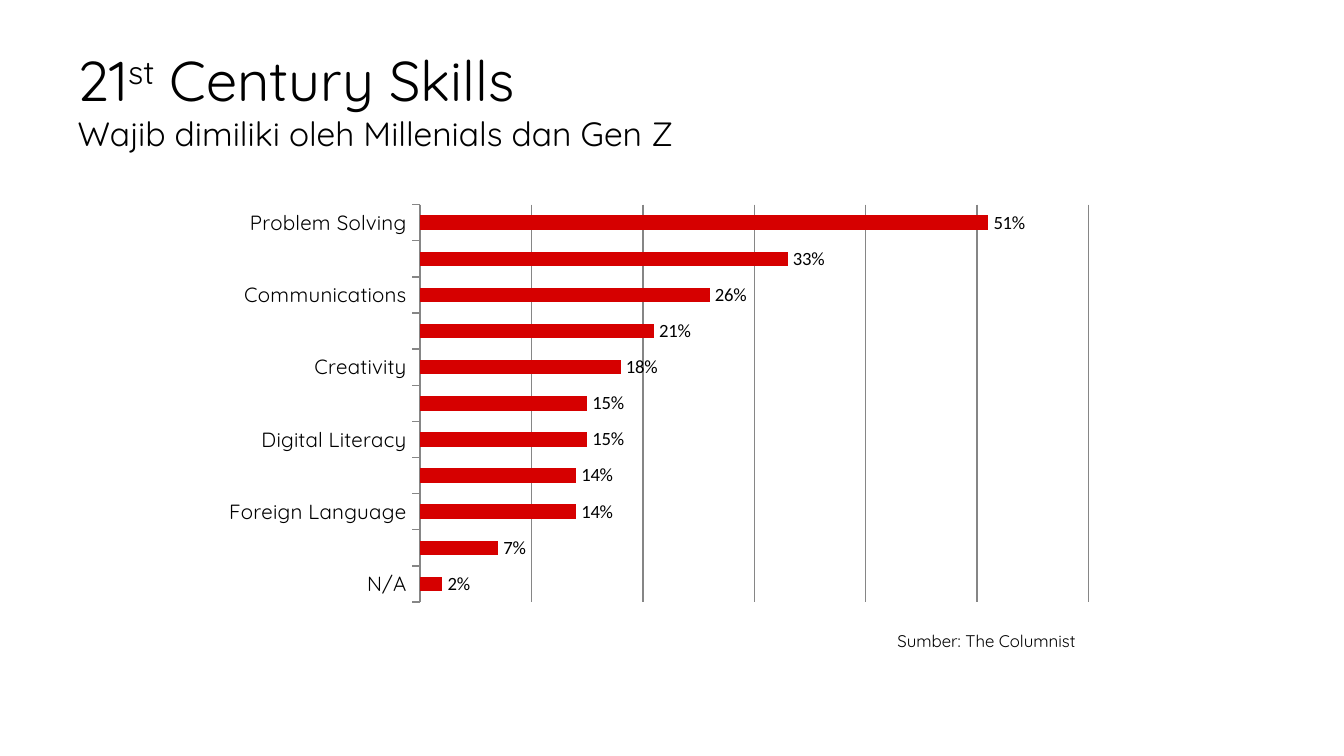
from pptx import Presentation
from pptx.chart.data import CategoryChartData
from pptx.dml.color import RGBColor
from pptx.enum.chart import XL_CHART_TYPE, XL_LABEL_POSITION, XL_TICK_LABEL_POSITION, XL_TICK_MARK
from pptx.util import Cm, Pt

BAR = XL_CHART_TYPE.BAR_CLUSTERED
OUTSIDE_END = XL_LABEL_POSITION.OUTSIDE_END
LABELS_LOW = XL_TICK_LABEL_POSITION.LOW
TICK_OUT = XL_TICK_MARK.OUTSIDE
TICK_NONE = XL_TICK_MARK.NONE
BLACK, RED, GRAY = "000000", "D60000", "868686"
HEADING_FONT, NUMBER_FONT = "Quicksand", "Calibri"


def set_font(font, size, name):
    for attribute, value in {"size": Pt(size), "name": name, "bold": False}.items():
        setattr(font, attribute, value)
    font.color.rgb = RGBColor.from_string(BLACK)


def add_text(left, top, width, height, paragraphs):
    """Add a text box; each paragraph is a size and its (text, baseline) runs."""
    frame = slide.shapes.add_textbox(Cm(left), Cm(top), Cm(width), Cm(height)).text_frame
    frame.word_wrap = True
    for index, (size, runs) in enumerate(paragraphs):
        paragraph = frame.add_paragraph() if index else frame.paragraphs[0]
        for text, baseline in runs:
            run = paragraph.add_run()
            run.text = text
            set_font(run.font, size, HEADING_FONT)
            if baseline:
                run.font._element.set("baseline", str(baseline * 1000))


presentation = Presentation()
presentation.slide_width = Cm(25.4)
presentation.slide_height = Cm(14.28)
slide = presentation.slides.add_slide(presentation.slide_layouts[6])

add_text(1.22, 0.74, 22.43, 2.39, [
    (30, [("21", 0), ("st", 30), (" Century Skills", 0)]),
    (18, [("Wajib dimiliki oleh Millenials dan Gen Z", 0)]),
])
add_text(16.71, 11.79, 6.22, 0.64, [(9, [("Sumber: The Columnist", 0)])])

skill_shares = {
    "Problem Solving": 0.51,
    "Team Working": 0.33,
    "Communications": 0.26,
    "Critical Thinking": 0.21,
    "Creativity": 0.18,
    "Literacy": 0.15,
    "Digital Literacy": 0.15,
    "Leadership": 0.14,
    "Foreign Language": 0.14,
    "Emotional Intelligent": 0.07,
    "N/A": 0.02,
}
skill_data = CategoryChartData(number_format="0%")
skill_data.categories = list(skill_shares)
skill_data.add_series("Series 1", list(skill_shares.values()))
skill_chart = slide.shapes.add_chart(
    BAR, Cm(3.99), Cm(3.71), Cm(16.92), Cm(7.82), skill_data).chart
skill_chart.has_legend = False
skill_chart.has_title = False
set_font(skill_chart.font, 10, NUMBER_FONT)

skill_axis = skill_chart.category_axis
skill_axis.reverse_order = True
skill_axis.major_tick_mark = TICK_OUT
skill_axis.minor_tick_mark = TICK_NONE
skill_axis.tick_label_position = LABELS_LOW
set_font(skill_axis.tick_labels.font, 11, HEADING_FONT)

share_axis = skill_chart.value_axis
share_axis_format = {"visible": False, "has_major_gridlines": True,
                     "minimum_scale": 0, "maximum_scale": 0.6, "major_unit": 0.1}
for attribute, value in share_axis_format.items():
    setattr(share_axis, attribute, value)
for line in (skill_axis.format.line, share_axis.major_gridlines.format.line):
    line.color.rgb = RGBColor.from_string(GRAY)
    line.width = Pt(0.75)

bars = skill_chart.plots[0]
bars.gap_width = 150
bars.vary_by_categories = False
share_fill = bars.series[0].format.fill
share_fill.solid()
share_fill.fore_color.rgb = RGBColor.from_string(RED)

share_labels = bars.series[0].data_labels
share_label_format = {"show_value": True, "position": OUTSIDE_END,
                      "number_format": "0%", "number_format_is_linked": False}
for attribute, value in share_label_format.items():
    setattr(share_labels, attribute, value)
set_font(share_labels.font, 10, NUMBER_FONT)

presentation.save("out.pptx")
